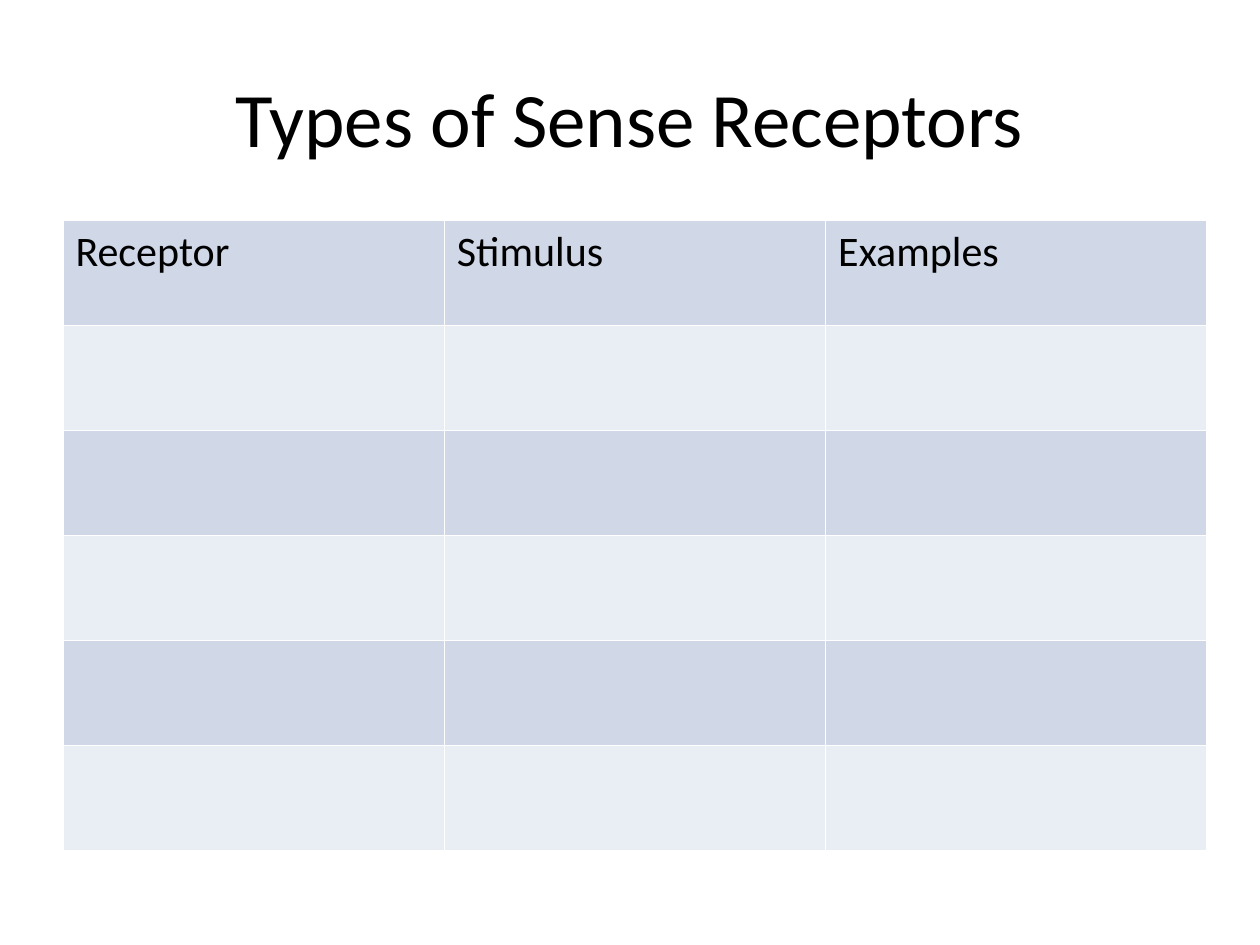
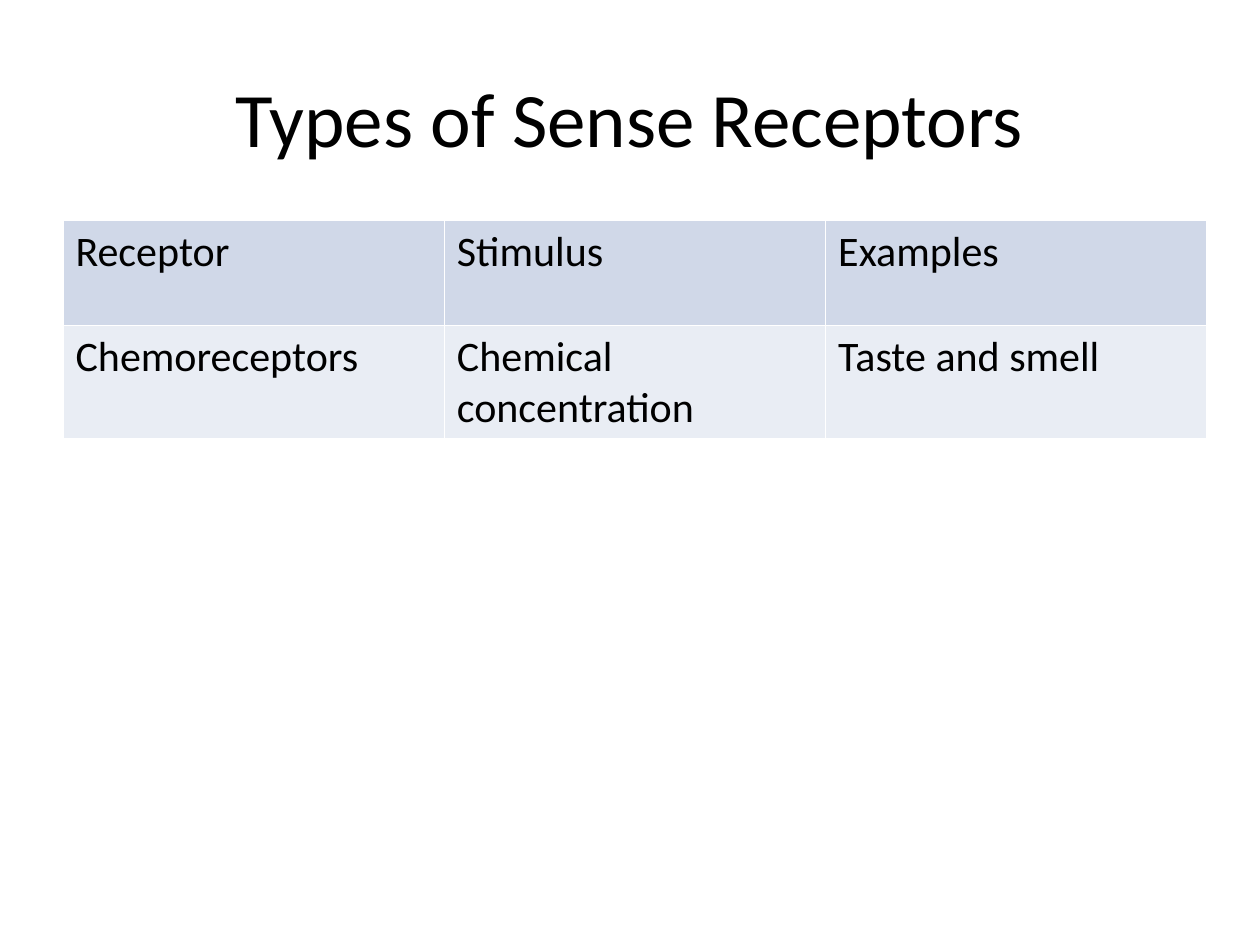
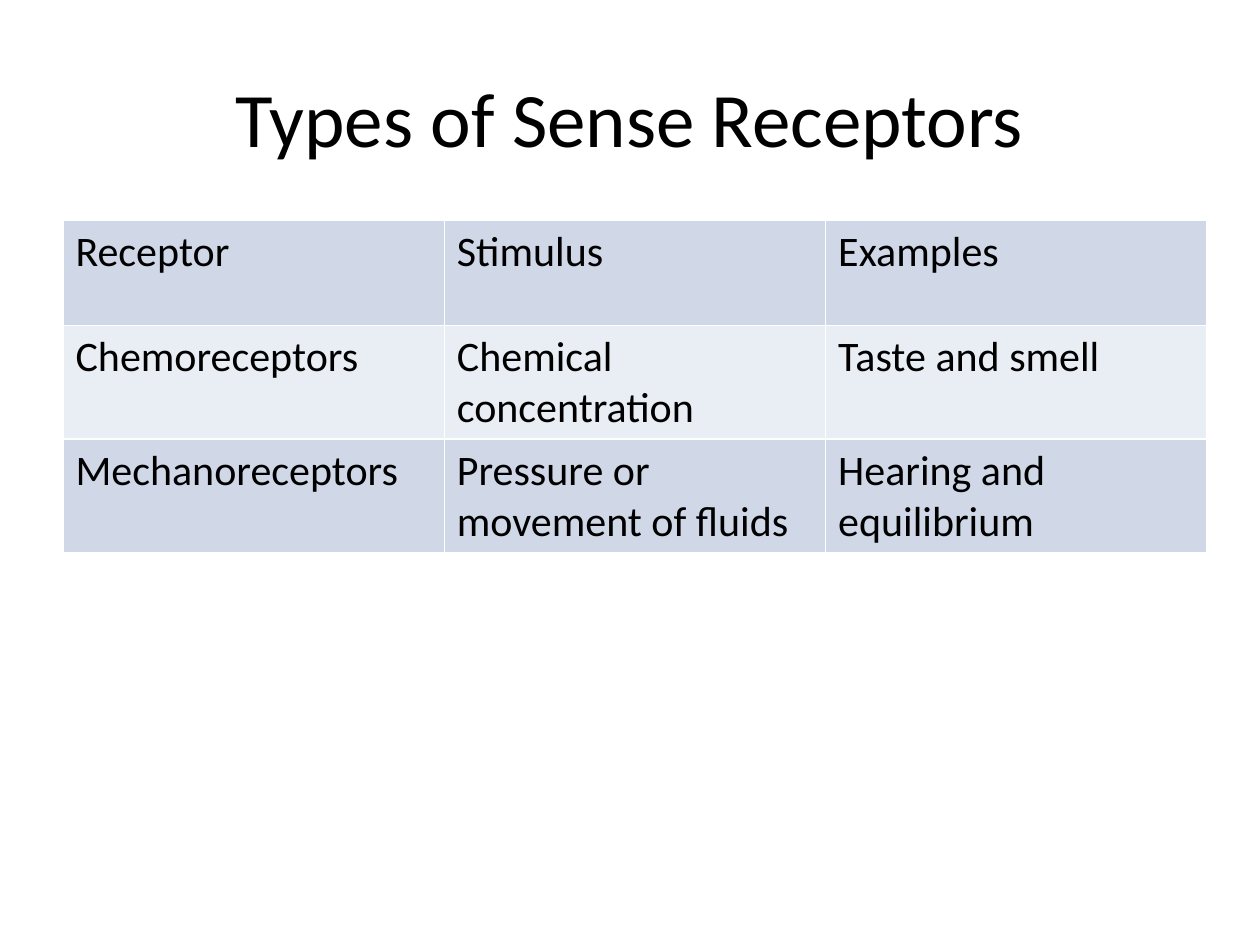
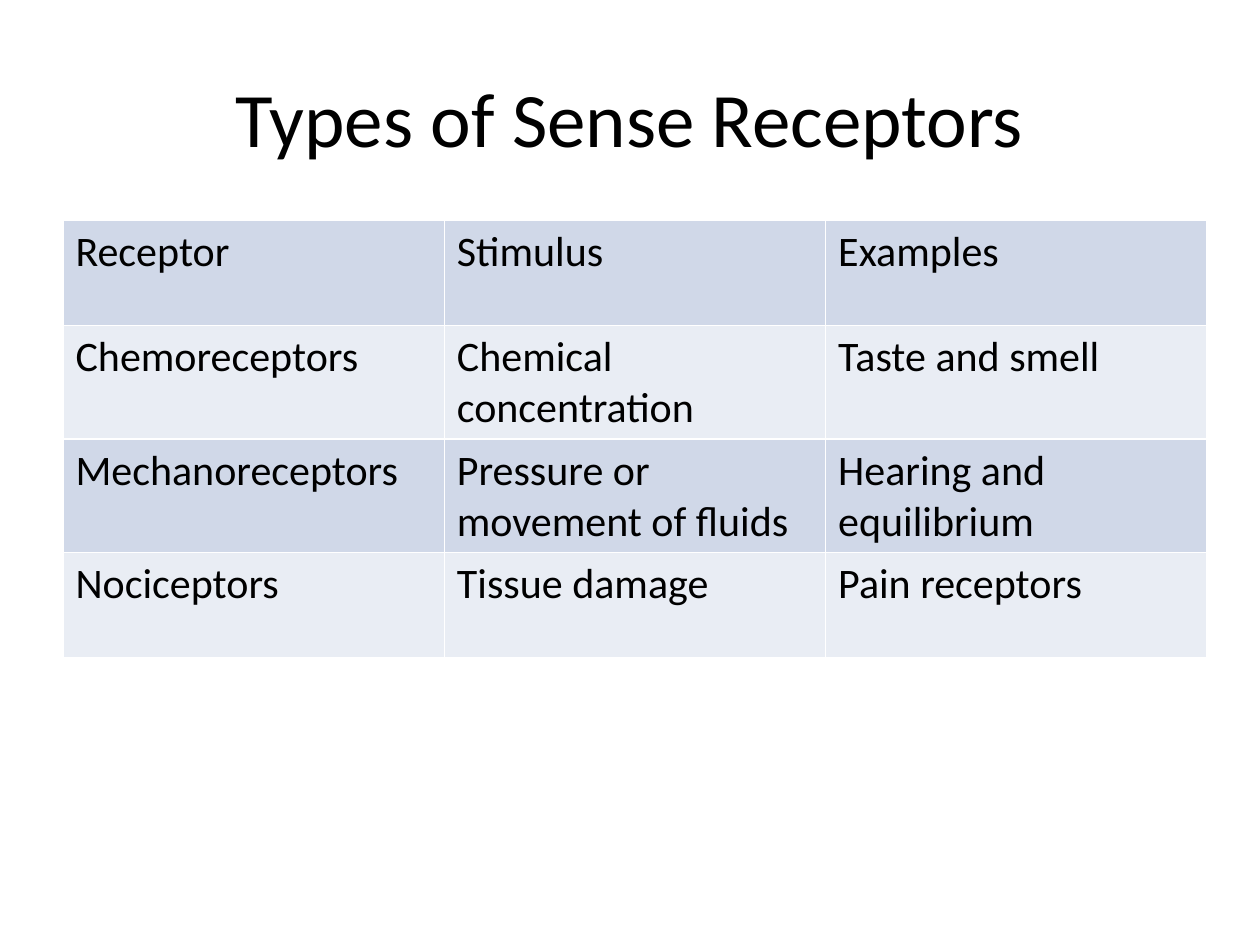
import pptx
import pptx.util
import pptx.dml.color
import pptx.enum.text
import pptx.oxml
import pptx.oxml.ns

Inches = pptx.util.Inches
Pt = pptx.util.Pt
RGBColor = pptx.dml.color.RGBColor
PP_ALIGN = pptx.enum.text.PP_ALIGN
MSO_ANCHOR = pptx.enum.text.MSO_ANCHOR

BLACK = RGBColor(0x00, 0x00, 0x00)
WHITE = RGBColor(0xFF, 0xFF, 0xFF)
DARK_BAND = RGBColor(0xD0, 0xD8, 0xE8)
LIGHT_BAND = RGBColor(0xE9, 0xED, 0xF4)
BANDS = (DARK_BAND, LIGHT_BAND)

FONT = "Calibri"
SLIDE_WIDTH = Inches(10)
SLIDE_HEIGHT = Inches(7.5)
MARGIN = 0.05
TITLE_TOP = 0.04
TITLE_HEIGHT = 1 / 6
GRID_TOP = 7 / 30
GRID_WIDTH = 0.908
ROW_HEIGHT = 1 / 9

TITLE = "Types of Sense Receptors"
HEADINGS = ("Receptor", "Stimulus", "Examples")
RECEPTORS = [
    ("Chemoreceptors", "Chemical concentration", "Taste and smell"),
    ("Mechanoreceptors", "Pressure or movement of fluids", "Hearing and equilibrium"),
    ("Nociceptors", "Tissue damage", "Pain receptors"),
]
UNFILLED = [("", "", "")] * 5


def across(share):
    return int(SLIDE_WIDTH * share)


def down(share):
    return int(SLIDE_HEIGHT * share)


def write(frame, text, size=24, color=BLACK, align=PP_ALIGN.LEFT):
    paragraph = frame.paragraphs[0]
    paragraph.alignment = align
    run = paragraph.add_run()
    run.text = text
    run.font.name = FONT
    run.font.size = Pt(size)
    run.font.color.rgb = color


def add_title(slide, text):
    title = slide.shapes.add_textbox(
        across(MARGIN), down(TITLE_TOP), across(1 - 2 * MARGIN), down(TITLE_HEIGHT)
    )
    title.text_frame.word_wrap = True
    title.text_frame.vertical_anchor = MSO_ANCHOR.MIDDLE
    write(title.text_frame, text, size=44, align=PP_ALIGN.CENTER)


def outline_cell(cell, color=WHITE, width=1):
    properties = cell._tc.get_or_add_tcPr()
    for position, side in enumerate("LRTB"):
        border = pptx.oxml.parse_xml(
            f'<a:ln{side} {pptx.oxml.ns.nsdecls("a")} w="{Pt(width)}">'
            f'<a:solidFill><a:srgbClr val="{color}"/></a:solidFill></a:ln{side}>'
        )
        properties.insert(position, border)


def add_receptor_grid(slide, rows):
    grid = slide.shapes.add_table(
        len(rows), len(HEADINGS), across(MARGIN), down(GRID_TOP),
        across(GRID_WIDTH), down(ROW_HEIGHT * len(rows)),
    ).table
    grid.first_row = False
    grid.horz_banding = False
    for row_index, row in enumerate(rows):
        for column_index, text in enumerate(row):
            cell = grid.cell(row_index, column_index)
            cell.fill.solid()
            cell.fill.fore_color.rgb = BANDS[row_index % 2]
            outline_cell(cell)
            if text:
                write(cell.text_frame, text)


def main():
    deck = pptx.Presentation()
    deck.slide_width = SLIDE_WIDTH
    deck.slide_height = SLIDE_HEIGHT
    blank = deck.slide_layouts[6]
    stages = [UNFILLED] + [RECEPTORS[:count] for count in range(1, len(RECEPTORS) + 1)]
    for stage in stages:
        slide = deck.slides.add_slide(blank)
        add_title(slide, TITLE)
        add_receptor_grid(slide, [HEADINGS] + stage)
    deck.save("out.pptx")


if __name__ == "__main__":
    main()
